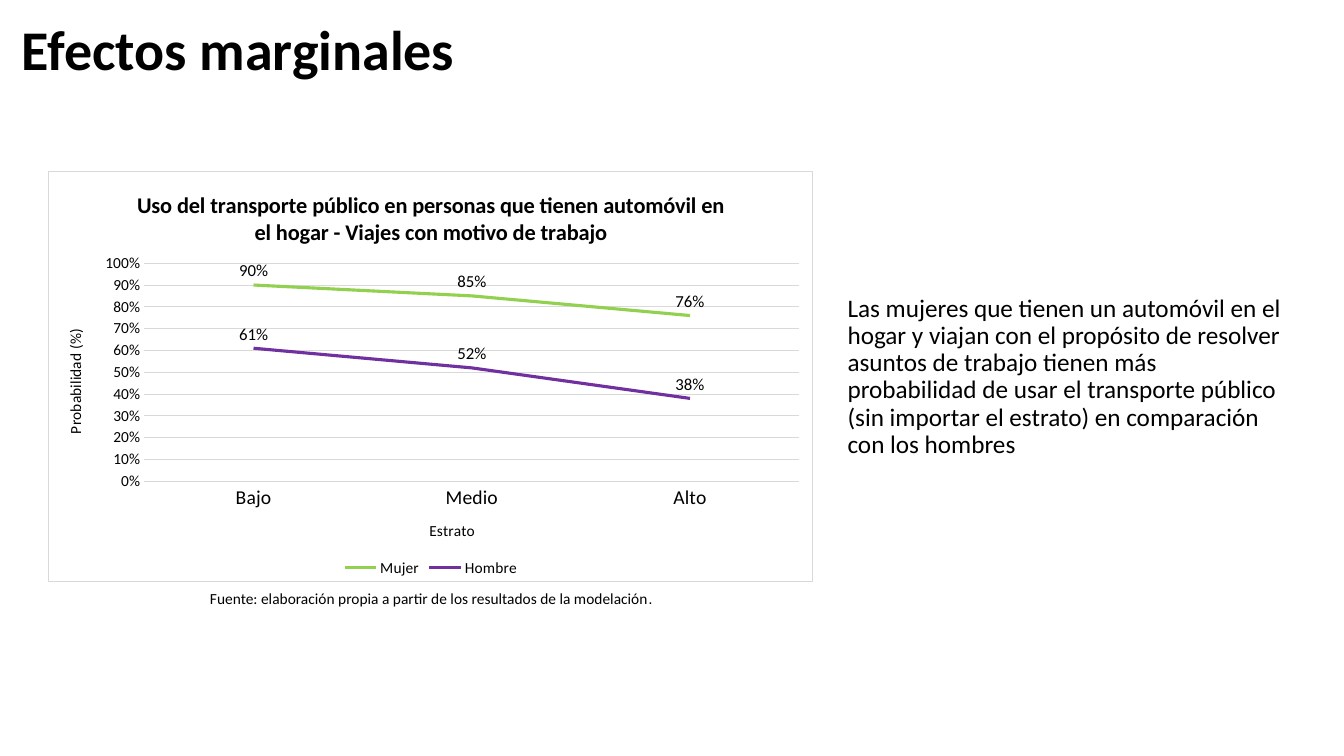
"""Build the slide on marginal effects of public transport use by gender."""
from dataclasses import dataclass

from lxml import etree
from pptx import Presentation
from pptx.chart.chart import Chart
from pptx.chart.data import CategoryChartData
from pptx.dml.color import RGBColor
from pptx.enum.chart import XL_CHART_TYPE, XL_LABEL_POSITION, XL_LEGEND_POSITION, XL_TICK_MARK
from pptx.enum.text import MSO_ANCHOR, MSO_AUTO_SIZE, PP_ALIGN
from pptx.oxml import parse_xml
from pptx.oxml.ns import nsdecls, qn
from pptx.slide import Slide
from pptx.text.text import Font
from pptx.util import Cm, Pt

LINE_CHART = XL_CHART_TYPE.LINE
LABEL_ABOVE = XL_LABEL_POSITION.ABOVE
LEGEND_BOTTOM = XL_LEGEND_POSITION.BOTTOM
NO_TICK = XL_TICK_MARK.NONE
MIDDLE = MSO_ANCHOR.MIDDLE
FIXED_SIZE = MSO_AUTO_SIZE.NONE
GROW = MSO_AUTO_SIZE.SHAPE_TO_FIT_TEXT
LEFT, CENTER = PP_ALIGN.LEFT, PP_ALIGN.CENTER

COLORS = {"text": "000000", "rule": "D9D9D9", "women": "92D050", "men": "7030A0"}
STRATA = ("Bajo", "Medio", "Alto")
PLOT_AREA = {"x": 0.125, "y": 0.223, "w": 0.857, "h": 0.533}


@dataclass(frozen=True)
class Group:
    """One gender and its probabilities by stratum."""

    name: str
    probabilities: tuple[float, ...]
    color: str


@dataclass(frozen=True)
class Note:
    """A text box in centimetres, with its runs as text and font pairs."""

    box: tuple[float, float, float, float]
    runs: tuple[tuple[str, str], ...]
    size: float
    align: PP_ALIGN
    line_spacing: float


GROUPS = (
    Group("Mujer", (0.90, 0.85, 0.76), "women"),
    Group("Hombre", (0.61, 0.52, 0.38), "men"),
)
NOTES = (
    Note(
        (0.48, 14.71, 20.78, 0.74),
        (
            ("Fuente: elaboración propia a partir de los resultados de la modelación", "Calibri"),
            (".", "Arial"),
        ),
        11, CENTER, 1.0,
    ),
    Note(
        (21.11, 7.32, 11.53, 4.42),
        ((
            "Las mujeres que tienen un automóvil en el hogar y viajan con el propósito de "
            "resolver asuntos de trabajo tienen más probabilidad de usar el transporte público "
            "(sin importar el estrato) en comparación con los hombres",
            "Calibri",
        ),),
        18, LEFT, 0.9,
    ),
)


def style_font(font: Font, size: float, bold: bool = False, face: str = "Calibri") -> None:
    """Apply the text colour with a size, weight and face."""
    font.name = face
    font.size = Pt(size)
    font.bold = bold
    font.color.rgb = RGBColor.from_string(COLORS["text"])


def add_heading(slide: Slide, text: str) -> None:
    """Place and format the slide title."""
    heading = slide.shapes.title
    heading.left, heading.top, heading.width, heading.height = map(Cm, (0.3, 0.03, 29.21, 2.57))
    frame = heading.text_frame
    frame.text = text
    frame.auto_size = FIXED_SIZE
    frame.vertical_anchor = MIDDLE
    paragraph = frame.paragraphs[0]
    paragraph.alignment = LEFT
    paragraph.line_spacing = 0.9
    style_font(paragraph.runs[0].font, 40, bold=True)


def add_note(slide: Slide, note: Note) -> None:
    """Draw one text box."""
    frame = slide.shapes.add_textbox(*map(Cm, note.box)).text_frame
    frame.word_wrap = True
    frame.auto_size = GROW
    paragraph = frame.paragraphs[0]
    paragraph.alignment = note.align
    paragraph.line_spacing = note.line_spacing
    for text, face in note.runs:
        run = paragraph.add_run()
        run.text = text
        style_font(run.font, note.size, face=face)


def set_title(owner, text: str, size: float, bold: bool = False) -> None:
    """Title a chart or an axis."""
    owner.has_title = True
    title = owner.chart_title if isinstance(owner, Chart) else owner.axis_title
    title.text_frame.text = text
    style_font(title.text_frame.paragraphs[0].runs[0].font, size, bold)


def frame_chart(chart: Chart) -> None:
    """Fix the inner plot area and outline the chart."""
    chart_body = chart.element.find(qn("c:chart"))
    plot_area = chart_body.find(qn("c:plotArea"))
    for automatic in plot_area.findall(qn("c:layout")):
        plot_area.remove(automatic)
    layout = etree.Element(qn("c:layout"))
    manual = etree.SubElement(layout, qn("c:manualLayout"))
    settings = {"layoutTarget": "inner", "xMode": "edge", "yMode": "edge", **PLOT_AREA}
    for tag, value in settings.items():
        etree.SubElement(manual, qn(f"c:{tag}")).set("val", str(value))
    plot_area.insert(0, layout)
    outline = parse_xml(
        f'<c:spPr {nsdecls("c", "a")}><a:noFill/><a:ln w="{Pt(0.75)}"><a:solidFill>'
        f'<a:srgbClr val="{COLORS["rule"]}"/></a:solidFill></a:ln></c:spPr>'
    )
    chart_body.addnext(outline)


def style_axes(chart: Chart) -> None:
    """Format both axes and the gridlines."""
    strata, probability = chart.category_axis, chart.value_axis
    for axis, title, size in ((strata, "Estrato", 14), (probability, "Probabilidad (%)", 11)):
        set_title(axis, title, 11)
        axis.major_tick_mark = axis.minor_tick_mark = NO_TICK
        style_font(axis.tick_labels.font, size)
    probability.minimum_scale, probability.maximum_scale = 0, 1
    probability.major_unit = 0.1
    probability.tick_labels.number_format = "0%"
    probability.tick_labels.number_format_is_linked = False
    probability.format.line.fill.background()
    for line in (strata.format.line, probability.major_gridlines.format.line):
        line.color.rgb = RGBColor.from_string(COLORS["rule"])
        line.width = Pt(0.75)


def add_probability_chart(slide: Slide) -> None:
    """Draw the probabilities of both groups by stratum."""
    data = CategoryChartData(number_format="0%")
    data.categories = STRATA
    for group in GROUPS:
        data.add_series(group.name, group.probabilities)
    box = map(Cm, (1.22, 4.32, 19.28, 10.34))
    chart = slide.shapes.add_chart(LINE_CHART, *box, data).chart
    style_font(chart.font, 14)
    set_title(
        chart,
        "Uso del transporte público en personas que tienen automóvil en el hogar"
        " - Viajes con motivo de trabajo",
        16, bold=True,
    )
    chart.has_legend = True
    chart.legend.position = LEGEND_BOTTOM
    chart.legend.include_in_layout = False
    style_font(chart.legend.font, 11)
    style_axes(chart)
    chart.plots[0].vary_by_categories = False
    for series, group in zip(chart.plots[0].series, GROUPS):
        series.smooth = False
        series.format.line.color.rgb = RGBColor.from_string(COLORS[group.color])
        series.format.line.width = Pt(2.25)
        labels = series.data_labels
        labels.show_value = True
        labels.position = LABEL_ABOVE
        labels.number_format = "0%"
        labels.number_format_is_linked = False
        style_font(labels.font, 12)
    frame_chart(chart)


def main() -> None:
    """Assemble and save the slide."""
    presentation = Presentation()
    presentation.slide_width, presentation.slide_height = Cm(33.87), Cm(19.05)
    slide = presentation.slides.add_slide(presentation.slide_layouts[5])
    add_heading(slide, "Efectos marginales")
    for note in NOTES:
        add_note(slide, note)
    add_probability_chart(slide)
    presentation.save("out.pptx")


if __name__ == "__main__":
    main()
